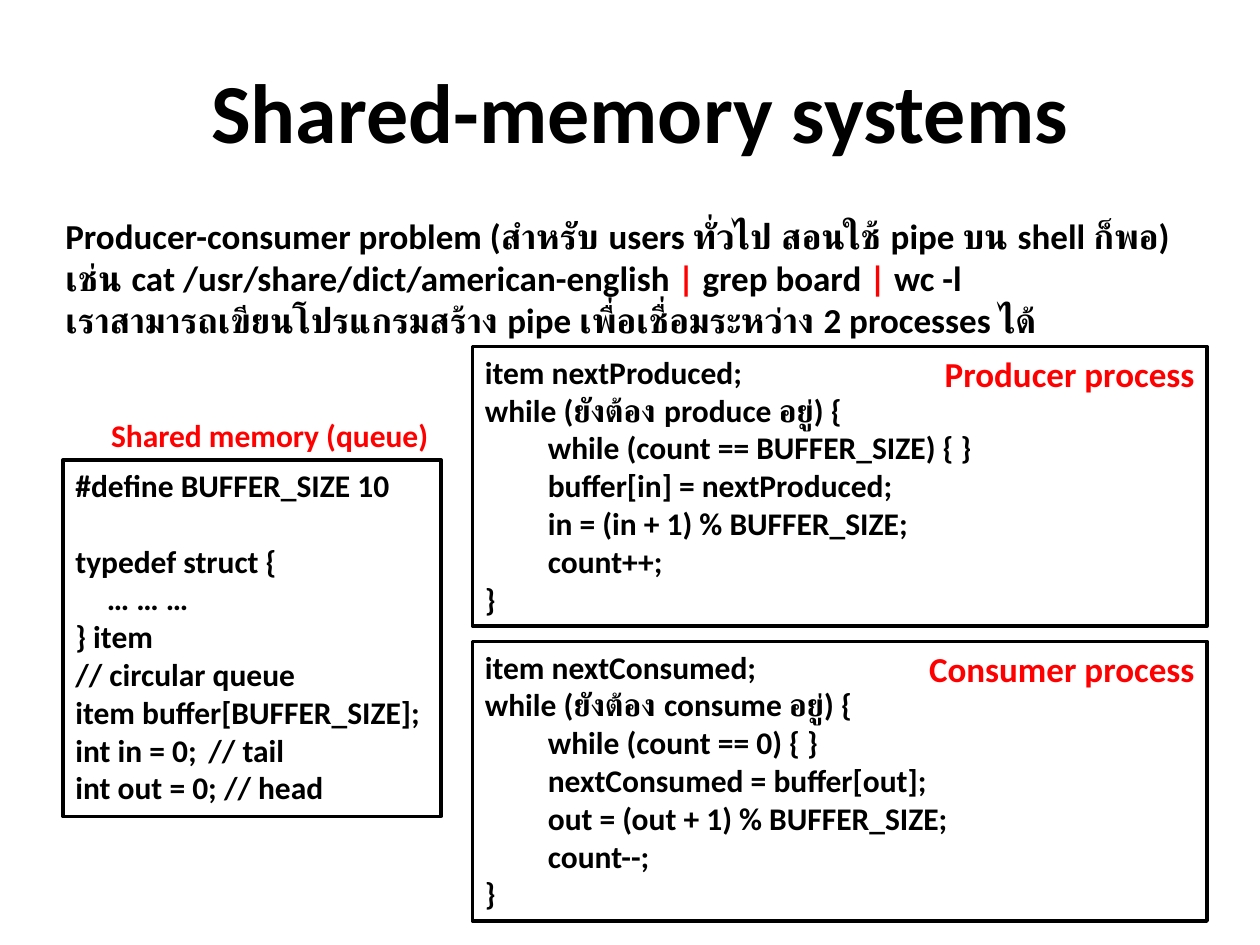
from lxml.etree import SubElement
from pptx import Presentation
from pptx.dml.color import RGBColor
from pptx.enum.shapes import MSO_SHAPE as Shape
from pptx.enum.text import MSO_ANCHOR as Anchor, MSO_AUTO_SIZE as AutoSize, PP_ALIGN as Align
from pptx.oxml.ns import qn
from pptx.util import Inches, Pt

BLACK = RGBColor(0, 0, 0)
RED = RGBColor(255, 0, 0)
FONT = "Calibri"
CODE_SIZE = 18
CODE_LINE = Pt(21.6)

INTRO = [
    [("Producer-consumer problem (สำหรับ users ทั่วไป สอนใช้ pipe บน shell ก็พอ)", BLACK)],
    [
        ("เช่น cat /usr/share/dict/american-english ", BLACK),
        ("|", RED),
        (" grep board ", BLACK),
        ("| ", RED),
        ("wc -l", BLACK),
    ],
    [("เราสามารถเขียนโปรแกรมสร้าง pipe เพื่อเชื่อมระหว่าง 2 processes ได้", BLACK)],
]
QUEUE_CODE = [
    "#define BUFFER_SIZE 10",
    "typedef struct {",
    "\t… … …",
    "} item",
    "// circular queue",
    "item buffer[BUFFER_SIZE];",
    "int in = 0;\t // tail",
    "int out = 0; // head",
]
PRODUCER_CODE = [
    "item nextProduced;",
    "while (ยังต้อง produce อยู่) {",
    "\twhile (count == BUFFER_SIZE) { }",
    "\tbuffer[in] = nextProduced;",
    "\tin = (in + 1) % BUFFER_SIZE;",
    "\tcount++;",
    "}",
]
CONSUMER_CODE = [
    "item nextConsumed;",
    "while (ยังต้อง consume อยู่) {",
    "\twhile (count == 0) { }",
    "\tnextConsumed = buffer[out];",
    "\tout = (out + 1) % BUFFER_SIZE;",
    "\tcount--;",
    "}",
]


def write_paragraphs(shape, paragraphs, size, align=Align.LEFT):
    frame = shape.text_frame
    frame.word_wrap = True
    frame.auto_size = AutoSize.SHAPE_TO_FIT_TEXT
    frame.vertical_anchor = Anchor.TOP
    for index, runs in enumerate(paragraphs):
        paragraph = frame.add_paragraph() if index else frame.paragraphs[0]
        paragraph.alignment = align
        for text, color in runs:
            run = paragraph.add_run()
            run.text = text
            run.font.name = FONT
            run.font.size = Pt(size)
            run.font.bold = True
            run.font.color.rgb = color
    return frame.paragraphs


def add_text(slide, box, paragraphs, size, align=Align.LEFT):
    shape = slide.shapes.add_textbox(*map(Inches, box))
    write_paragraphs(shape, paragraphs, size, align)


def set_tab(paragraph, position):
    properties = paragraph._p.get_or_add_pPr()
    tabs = SubElement(properties, qn("a:tabLst"))
    SubElement(tabs, qn("a:tab"), pos=str(Inches(position)), algn="l")


def add_code(slide, box, lines, tab=None):
    shape = slide.shapes.add_shape(Shape.RECTANGLE, *map(Inches, box))
    shape.shadow.inherit = False
    shape.fill.background()
    shape.line.color.rgb = BLACK
    shape.line.width = Pt(2)
    paragraphs = write_paragraphs(shape, [[(line, BLACK)] for line in lines], CODE_SIZE)
    if tab:
        for paragraph in paragraphs:
            set_tab(paragraph, tab)
    return paragraphs


def add_queue(slide, box):
    left, top, width, height = box
    label_height = 0.4
    code_box = (left, top + label_height, width, height - label_height)
    paragraphs = add_code(slide, code_box, QUEUE_CODE)
    paragraphs[1].space_before = CODE_LINE
    set_tab(paragraphs[2], 0.25)
    label = [[("Shared memory (queue)", RED)]]
    add_text(slide, (left, top, width, label_height), label, CODE_SIZE, Align.RIGHT)


def add_process(slide, box, title, lines):
    left, top, width, height = box
    title_width = 2.33
    add_code(slide, box, lines, tab=0.5)
    title_box = (left + width - title_width, top, title_width, 0.44)
    add_text(slide, title_box, [[(title, RED)]], 20, Align.RIGHT)


def main():
    presentation = Presentation()
    presentation.slide_width = Inches(10)
    presentation.slide_height = Inches(7.5)
    slide = presentation.slides.add_slide(presentation.slide_layouts[6])

    title = [[("Shared-memory systems", BLACK)]]
    add_text(slide, (0.58, 0.42, 9, 0.91), title, 48, Align.CENTER)
    add_text(slide, (0.42, 1.65, 9.42, 1.11), INTRO, 20)
    add_queue(slide, (0.5, 3.25, 3, 3.23))
    add_process(slide, (3.75, 2.75, 5.83, 2.22), "Producer process", PRODUCER_CODE)
    add_process(slide, (3.75, 5.09, 5.83, 2.22), "Consumer process", CONSUMER_CODE)

    presentation.save("out.pptx")


if __name__ == "__main__":
    main()
